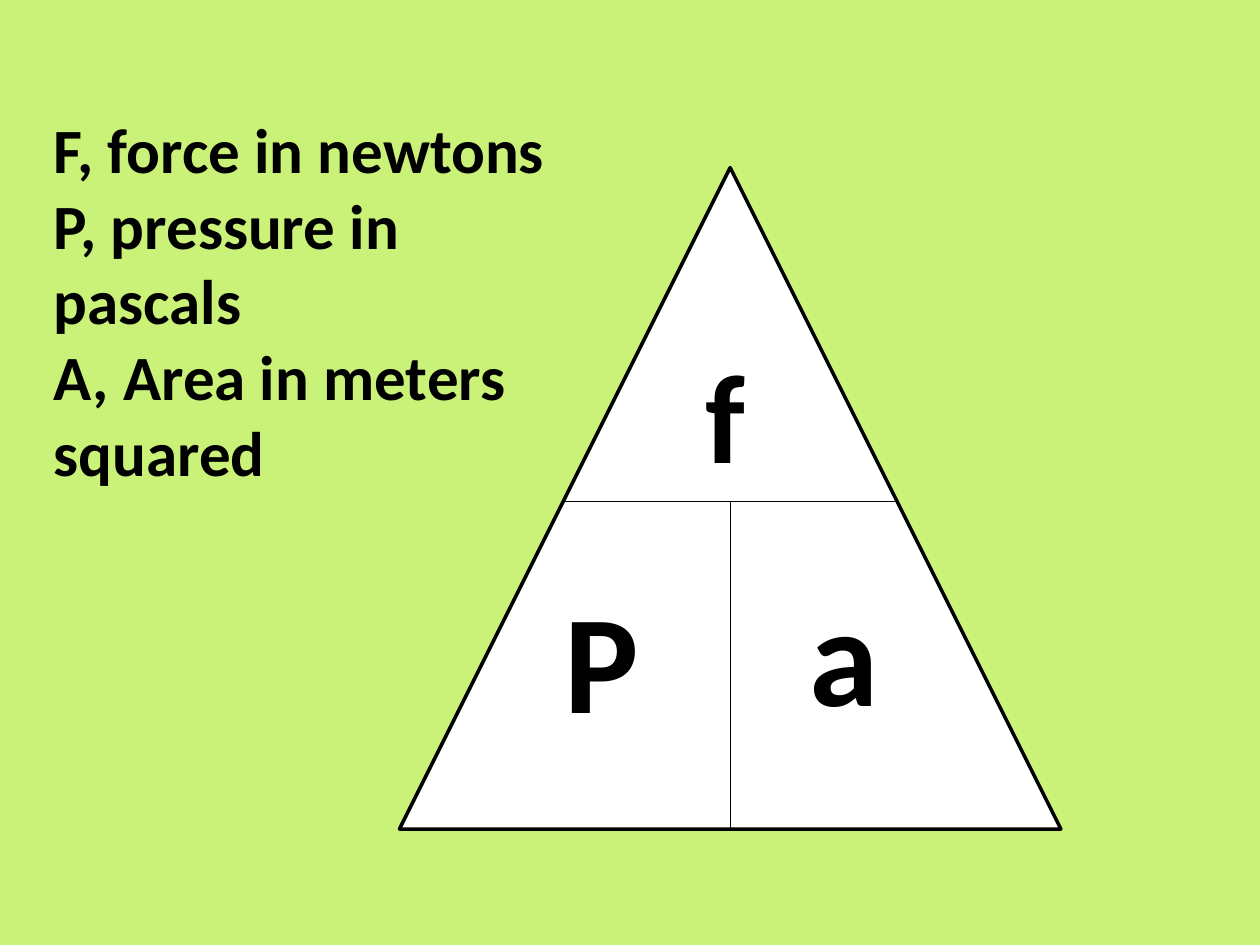
import pptx
import pptx.dml.color
import pptx.enum.shapes
import pptx.enum.text
import pptx.oxml.ns
import pptx.util
from lxml import etree
from pptx.dml.color import RGBColor
from pptx.util import Inches

BLACK = RGBColor(0x00, 0x00, 0x00)
WHITE = RGBColor(0xFF, 0xFF, 0xFF)
LIME = RGBColor(0xCA, 0xF2, 0x78)
FONT = "Calibri"

# Left, top, width, height in inches
TRIANGLE = (3.17, 1.33, 5.25, 5.25)
DIVIDER_Y = 3.98

# Paragraphs, size in points, box
LABELS = [
    (["P"], 80, (4.38, 4.5, 1.42, 1.45)),
    (["f"], 72, (5.5, 2.63, 0.83, 1.31)),
    (["a"], 80, (6.33, 4.45, 0.83, 1.45)),
    (["F, force in newtons", "P, pressure in pascals", "A, Area in meters squared"],
     36, (0.33, 0.83, 4.33, 3.13)),
]


def add_divider(slide, start, end):
    divider = slide.shapes.add_connector(
        pptx.enum.shapes.MSO_CONNECTOR.STRAIGHT,
        *(Inches(value) for value in start + end))
    divider.line.color.rgb = BLACK
    divider.line.width = pptx.util.Pt(0.75)
    etree.SubElement(divider._element.spPr, pptx.oxml.ns.qn("a:effectLst"))


def add_label(slide, paragraphs, size, box):
    frame = slide.shapes.add_textbox(*(Inches(value) for value in box)).text_frame
    frame.word_wrap = True
    frame.auto_size = pptx.enum.text.MSO_AUTO_SIZE.SHAPE_TO_FIT_TEXT
    for index, words in enumerate(paragraphs):
        paragraph = frame.add_paragraph() if index else frame.paragraphs[0]
        run = paragraph.add_run()
        run.text = words
        run.font.name = FONT
        run.font.size = pptx.util.Pt(size)
        run.font.bold = True
        run.font.color.rgb = BLACK


def main():
    deck = pptx.Presentation()
    deck.slide_width, deck.slide_height = Inches(10), Inches(7.5)
    slide = deck.slides.add_slide(deck.slide_layouts[6])
    slide.background.fill.solid()
    slide.background.fill.fore_color.rgb = LIME

    triangle = slide.shapes.add_shape(
        pptx.enum.shapes.MSO_SHAPE.ISOSCELES_TRIANGLE,
        *(Inches(value) for value in TRIANGLE))
    triangle.shadow.inherit = False
    triangle.fill.solid()
    triangle.fill.fore_color.rgb = WHITE
    triangle.line.color.rgb = BLACK
    triangle.line.width = pptx.util.Pt(2)

    left, top, width, height = TRIANGLE
    middle = left + width / 2
    half_span = width / 2 * (DIVIDER_Y - top) / height
    add_divider(slide, (middle - half_span, DIVIDER_Y), (middle + half_span, DIVIDER_Y))
    add_divider(slide, (middle, DIVIDER_Y), (middle, top + height))

    for paragraphs, size, box in LABELS:
        add_label(slide, paragraphs, size, box)

    deck.save("out.pptx")


if __name__ == "__main__":
    main()
